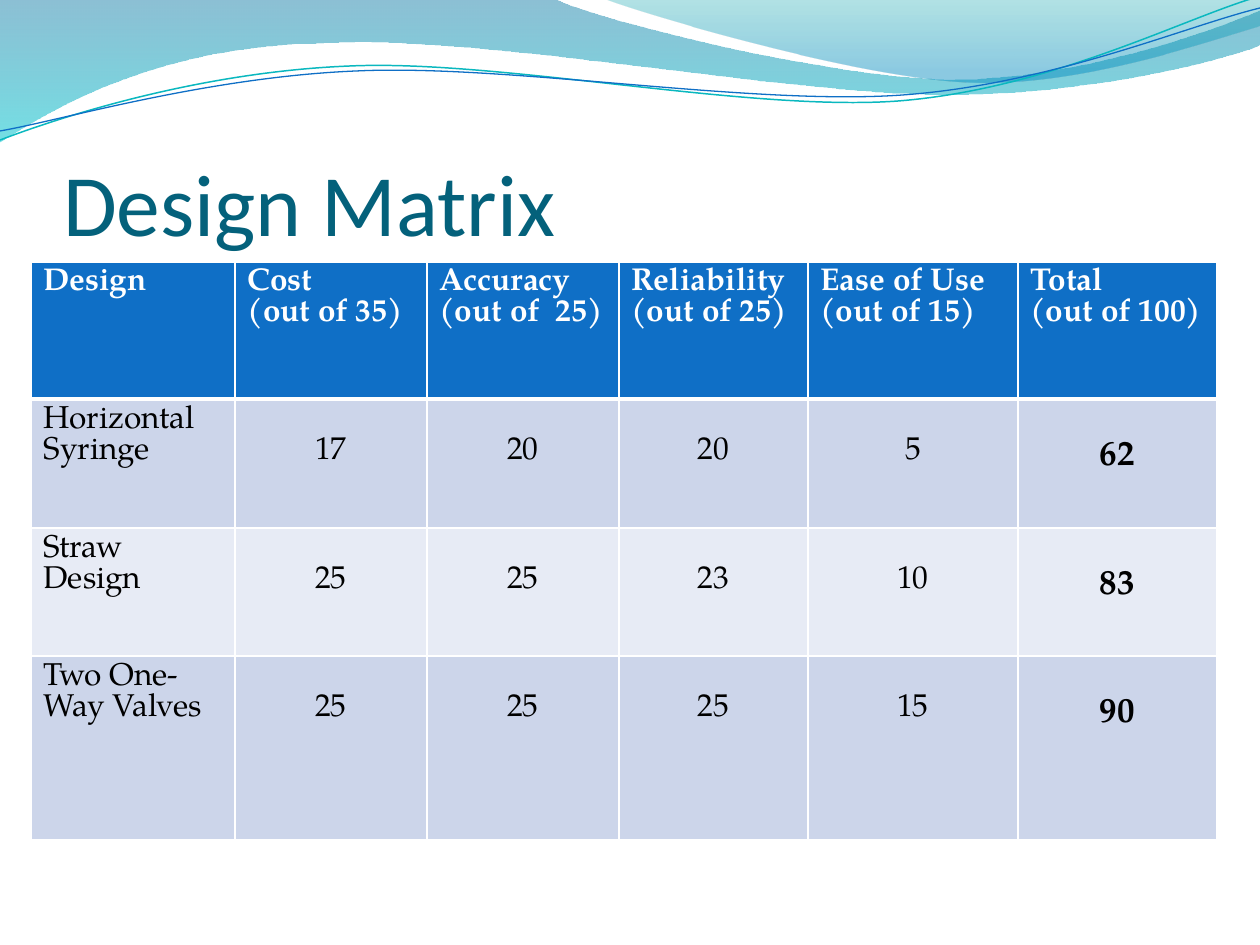
from lxml import etree
from pptx import Presentation
from pptx import util as u
from pptx.dml.color import RGBColor
from pptx.enum import text
from pptx.oxml import ns

PX = 914400 // 126
BLUE = RGBColor(0x0F, 0x6F, 0xC6)
TEAL = RGBColor(0x0A, 0xB8, 0xBF)
DEEP = RGBColor(0x04, 0x61, 0x7B)
WHITE = RGBColor(255, 255, 255)
BLACK = RGBColor(0, 0, 0)
BANDS = RGBColor(0xCC, 0xD5, 0xEA), RGBColor(0xE7, 0xEB, 0xF5)
SEA = (RGBColor(0, 0x74, 0xA1), 45, 0), (RGBColor(0, 0xC6, 0xCF), 55, 1)
SKY = (RGBColor(0, 0xA1, 0xA9), 30, 0), (RGBColor(0, 0x8B, 0xBF), 45, 0.8)
SERIF = "TeX Gyre Pagella"

# Each step holds one point (a line) or three (a Bezier curve).
SWELL = [
    [(0, 0)], [(554, -1)],
    [(600, 21), (837, 79), (955, 79)], [(1075, 79), (1207, 33), (1260, 11)],
    [(1261, 45)],
    [(1239, 55), (1096, 96), (940, 94)], [(784, 94), (481, 35), (324, 43)],
    [(163, 45), (58, 105), (-1, 142)]]
CREST = [
    [(604, -1)],
    [(641, 14), (859, 78), (969, 82)], [(1079, 87), (1211, 40), (1260, 26)],
    [(1260, 0)]]
UPPER = [
    [(0, 140)],
    [(60, 117), (199, 72), (349, 66)], [(498, 59), (747, 112), (898, 101)],
    [(1050, 89), (1182, 19), (1257, -3)]]
LOWER = [
    [(0, 131)],
    [(59, 121), (207, 77), (357, 71)], [(508, 64), (752, 106), (903, 95)],
    [(1053, 84), (1186, 26), (1260, 8)]]

HEADS = ["Design", "Cost\n(out of 35)", "Accuracy\n(out of  25)",
         "Reliability\n(out of 25)", "Ease of Use\n(out of 15)",
         "Total\n(out of 100)"]
SCORES = [("Horizontal Syringe", 17, 20, 20, 5),
          ("Straw Design", 25, 25, 23, 10),
          ("Two One-Way Valves", 25, 25, 25, 15)]
COLS = [204, 192, 192, 189, 210, 199]
ROWS = [137, 129, 128, 184]


def bend(shape, steps):
    """Join each run of three line ends into one Bezier curve."""
    ends = iter(list(shape.element.spPr.iter(ns.qn("a:lnTo"))))
    for step in steps[1:]:
        parts = [next(ends) for point in step]
        if len(parts) == 1:
            continue
        curve = etree.Element(ns.qn("a:cubicBezTo"))
        parts[0].addprevious(curve)
        for part in parts:
            curve.append(part[0])
            part.getparent().remove(part)


def outline(slide, box, steps, close):
    left, top = box[:2]
    dots = [((x + left) * PX, (y + top) * PX) for step in steps for x, y in step]
    pen = slide.shapes.build_freeform(*dots[0])
    pen.add_line_segments(dots[1:], close=close)
    shape = pen.convert_to_shape()
    bend(shape, steps)
    shape.shadow.inherit = False
    return shape


def waves(slide, box):
    for steps, stops in ((SWELL, SEA), (CREST, SKY)):
        shape = outline(slide, box, steps, True)
        shape.line.fill.background()
        shape.fill.gradient()
        shape.fill.gradient_angle = 270
        for stop, (color, alpha, place) in zip(shape.fill.gradient_stops, stops):
            stop.color.rgb = color
            stop.position = place
        tints = shape.element.spPr.iter(ns.qn("a:srgbClr"))
        for tint, (color, alpha, place) in zip(tints, stops):
            etree.SubElement(tint, ns.qn("a:alpha"), val=str(alpha * 1000))
    for steps, color, width in ((UPPER, TEAL, 0.85), (LOWER, BLUE, 0.75)):
        shape = outline(slide, box, steps, False)
        shape.fill.background()
        shape.line.color.rgb = color
        shape.line.width = u.Pt(width)


def write(para, words, font, size, color, bold=False):
    for i, line in enumerate(words.split("\n")):
        if i:
            para.add_line_break()
        run = para.add_run()
        run.text = line
        run.font.name = font
        run.font.size = u.Pt(size)
        run.font.color.rgb = color
        run.font.bold = bold


def title(slide, box):
    frame = slide.shapes.add_textbox(*(n * PX for n in box)).text_frame
    frame.word_wrap = True
    frame.vertical_anchor = text.MSO_ANCHOR.BOTTOM
    frame.margin_left = frame.margin_right = frame.margin_bottom = 0
    write(frame.paragraphs[0], "Design Matrix", "Calibri", 50, DEEP)


def border(cell, row):
    """Rule the cell in white, thicker below the header row."""
    props = cell._tc.get_or_add_tcPr()
    thick = {(0, "B"), (1, "T")}
    for side in "LRTB":
        width = u.Pt(3 if (row, side) in thick else 1)
        line = etree.SubElement(props, ns.qn("a:ln" + side), w=str(width))
        fill = etree.SubElement(line, ns.qn("a:solidFill"))
        etree.SubElement(fill, ns.qn("a:srgbClr"), val=str(WHITE))


def matrix(slide, box):
    grid = slide.shapes.add_table(len(ROWS), len(COLS),
                                  *(n * PX for n in box)).table
    for col, width in zip(grid.columns, COLS):
        col.width = width * PX
    for row, height in zip(grid.rows, ROWS):
        row.height = height * PX
    lines = [HEADS] + [[*score, sum(score[1:])] for score in SCORES]
    for r, line in enumerate(lines):
        for c, value in enumerate(line):
            cell = grid.cell(r, c)
            border(cell, r)
            cell.fill.solid()
            cell.fill.fore_color.rgb = BANDS[(r - 1) % 2] if r else BLUE
            para = cell.text_frame.paragraphs[0]
            total = r > 0 and c == len(COLS) - 1
            if r and c:
                para.alignment = text.PP_ALIGN.CENTER
                cell.margin_top = (41 if total else 38) * PX
            write(para, str(value), SERIF, 20 if total else 18,
                  BLACK if r else WHITE, total or r == 0)


def main():
    deck = Presentation()
    deck.slide_width, deck.slide_height = u.Inches(10), u.Inches(7.5)
    slide = deck.slides.add_slide(deck.slide_layouts[6])
    waves(slide, (0, 0, 1260, 142))
    title(slide, (63, 97, 1144, 157))
    matrix(slide, (31, 262, sum(COLS), sum(ROWS)))
    deck.save("out.pptx")


if __name__ == "__main__":
    main()
